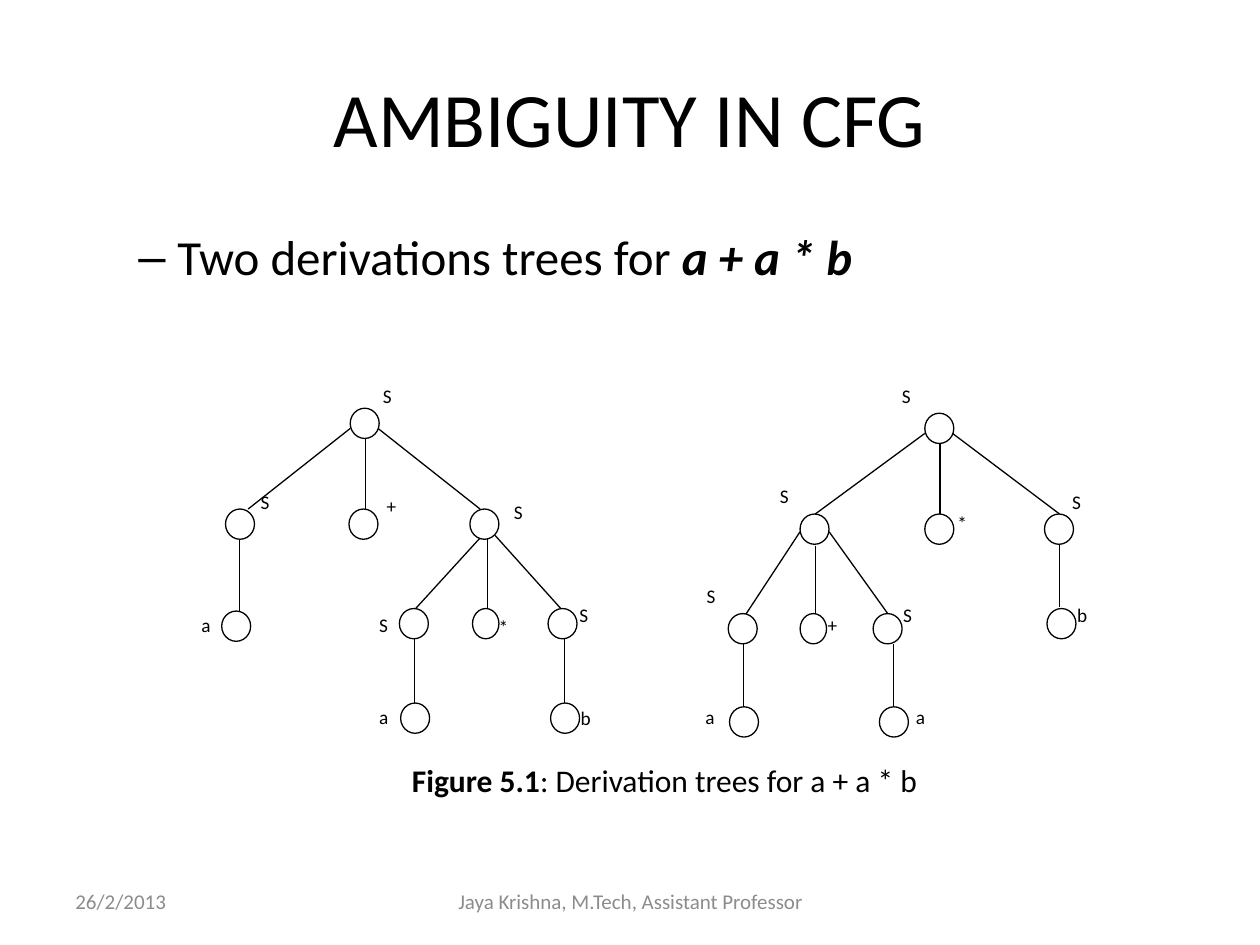
from pptx import Presentation
from pptx.dml.color import RGBColor as Rgb
from pptx.enum.shapes import MSO_CONNECTOR as Conn, MSO_SHAPE as Kind
from pptx.enum.text import MSO_ANCHOR as Anchor, PP_ALIGN as Align
from pptx.oxml.ns import qn
from pptx.util import Inches, Pt
from lxml.etree import SubElement as Sub

THEME = {
    "font": "Calibri", "ink": Rgb(0, 0, 0), "mute": Rgb(0x8C, 0x8C, 0x8C),
    "paper": Rgb(255, 255, 255), "line": 0.75,
    "title": 44, "body": 28, "cap": 18, "foot": 12, "label": 11,
}
TITLE = [("AMBIGUITY IN CFG", "")]
BODY = [("Two derivations trees for ", ""), ("a + a * b", "bi")]
DATE = [("26/2/2013", "")]
AUTHOR = [("Jaya Krishna, M.Tech, Assistant Professor", "")]
CAPTION = [("Figure 5.1", "b"), (": Derivation trees for a + a * b", "")]

DOT, SLIM, TALL = 0.23, 0.21, 0.24
TREES = [
    {
        "nodes": [
            ("S", 2.94, 3.0, 2.78, 3.24, DOT),
            ("S", 1.97, 3.84, 1.79, 4.04, DOT),
            ("+", 2.97, 3.87, 2.77, 4.04, DOT),
            ("S", 3.98, 3.92, 3.73, 4.04, DOT),
            ("a", 1.5, 4.82, 1.76, 4.85, DOT),
            ("S", 2.91, 4.82, 3.17, 4.83, DOT),
            ("*", 3.86, 4.83, 3.75, 4.83, SLIM),
            ("S", 4.5, 4.74, 4.35, 4.83, DOT),
            ("a", 2.91, 5.55, 3.18, 5.58, DOT),
            ("b", 4.51, 5.56, 4.37, 5.58, DOT),
        ],
        "edges": [
            (2.78, 3.4, 1.97, 4.04), (2.9, 3.48, 2.9, 4.04),
            (3.0, 3.4, 3.81, 4.04), (1.9, 4.28, 1.9, 4.85),
            (3.81, 4.27, 3.29, 4.84), (3.87, 4.28, 3.87, 4.85),
            (3.93, 4.25, 4.46, 4.84), (3.29, 5.07, 3.29, 5.58),
            (4.48, 5.07, 4.48, 5.58),
        ],
    },
    {
        "nodes": [
            ("S", 7.06, 3.0, 7.34, 3.28, DOT),
            ("S", 6.09, 3.79, 6.35, 4.08, DOT),
            ("*", 7.5, 4.01, 7.34, 4.08, DOT),
            ("S", 8.41, 3.84, 8.29, 4.08, DOT),
            ("S", 5.51, 4.59, 5.78, 4.87, DOT),
            ("+", 6.47, 4.82, 6.35, 4.87, SLIM),
            ("S", 7.07, 4.74, 6.93, 4.87, DOT),
            ("b", 8.45, 4.74, 8.31, 4.83, DOT),
            ("a", 5.5, 5.55, 5.79, 5.61, DOT),
            ("a", 7.17, 5.55, 6.98, 5.61, DOT),
        ],
        "edges": [
            (7.34, 3.44, 6.47, 4.08), (7.46, 3.52, 7.46, 4.08),
            (7.56, 3.44, 8.41, 4.08), (6.35, 4.22, 5.91, 4.89),
            (6.47, 4.33, 6.47, 4.9), (6.58, 4.22, 7.06, 4.89),
            (8.41, 4.32, 8.41, 4.82), (5.9, 5.11, 5.9, 5.61),
            (7.09, 5.11, 7.09, 5.61),
        ],
    },
]


def write(shape, runs, size, align=Align.LEFT, anchor=Anchor.TOP, ink="ink"):
    """Fill a shape with one paragraph of styled runs."""
    frame = shape.text_frame
    frame.word_wrap = True
    frame.vertical_anchor = anchor
    para = frame.paragraphs[0]
    para.alignment = align
    for text, style in runs:
        run = para.add_run()
        run.text = text
        font = run.font
        font.name, font.size = THEME["font"], Pt(THEME[size])
        font.color.rgb = THEME[ink]
        font.bold, font.italic = "b" in style, "i" in style
    return para


def add_text(shapes, box, *args, **opts):
    """Add a text box and write into it."""
    return write(shapes.add_textbox(*map(Inches, box)), *args, **opts)


def add_plate(shapes, kind, box):
    """Add a plain white shape without an outline."""
    shape = shapes.add_shape(kind, *map(Inches, box))
    shape.shadow.inherit = False
    shape.fill.solid()
    shape.fill.fore_color.rgb = THEME["paper"]
    shape.line.fill.background()
    return shape


def add_note(shapes, box, *args):
    """Add a white plate with text."""
    para = write(add_plate(shapes, Kind.RECTANGLE, box), *args)
    para.space_after = Pt(10)


def ink_line(line):
    """Style an outline in the theme ink."""
    line.color.rgb = THEME["ink"]
    line.width = Pt(THEME["line"])


def add_edge(shapes, ends):
    """Add a straight line between two points."""
    edge = shapes.add_connector(Conn.STRAIGHT, *map(Inches, ends))
    ink_line(edge.line)
    Sub(edge.element.spPr, qn("a:effectLst"))


def add_tree(shapes, tree):
    """Draw labels, then edges, then nodes of one tree."""
    for text, left, top, *_ in tree["nodes"]:
        add_note(shapes, (left, top, 0.38, 0.49), [(text, "")], "label")
    for ends in tree["edges"]:
        add_edge(shapes, ends)
    for *_, left, top, wide in tree["nodes"]:
        node = add_plate(shapes, Kind.OVAL, (left, top, wide, TALL))
        ink_line(node.line)


def add_dash(para):
    """Give a paragraph a dash bullet with a hanging indent."""
    props = para._p.get_or_add_pPr()
    props.set("marL", str(Inches(0.81)))
    props.set("indent", str(Inches(-0.31)))
    space = Sub(props, qn("a:spcBef"))
    Sub(space, qn("a:spcPct")).set("val", "20000")
    Sub(props, qn("a:buFont")).set("typeface", "Arial")
    Sub(props, qn("a:buChar")).set("char", "–")


def main():
    """Build the slide and save it."""
    deck = Presentation()
    deck.slide_width, deck.slide_height = Inches(10), Inches(7.5)
    slide = deck.slides.add_slide(deck.slide_layouts[6])
    shapes = slide.shapes
    add_text(shapes, (0.5, 0.3, 9, 1.25), TITLE, "title", Align.CENTER, Anchor.MIDDLE)
    add_dash(add_text(shapes, (0.5, 1.75, 9, 0.58), BODY, "body", Align.JUSTIFY))
    add_text(shapes, (0.5, 6.95, 2.33, 0.4), DATE, "foot",
             anchor=Anchor.MIDDLE, ink="mute")
    add_text(shapes, (3.42, 6.95, 3.17, 0.4), AUTHOR, "foot", Align.CENTER,
             Anchor.MIDDLE, "mute")
    figure = shapes.add_group_shape().shapes
    for tree in TREES:
        add_tree(figure, tree)
    add_note(figure, (2.97, 5.99, 4.61, 0.51), CAPTION, "cap", Align.CENTER)
    deck.save("out.pptx")


if __name__ == "__main__":
    main()
